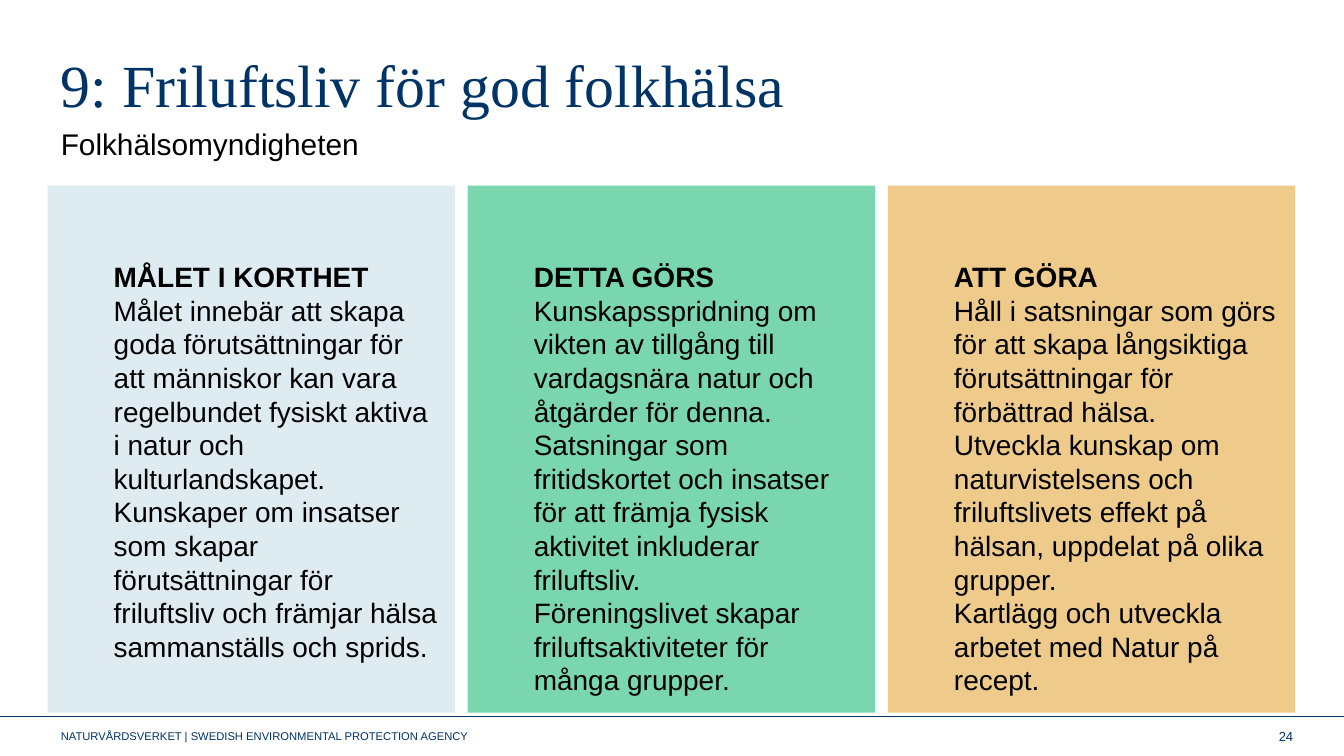
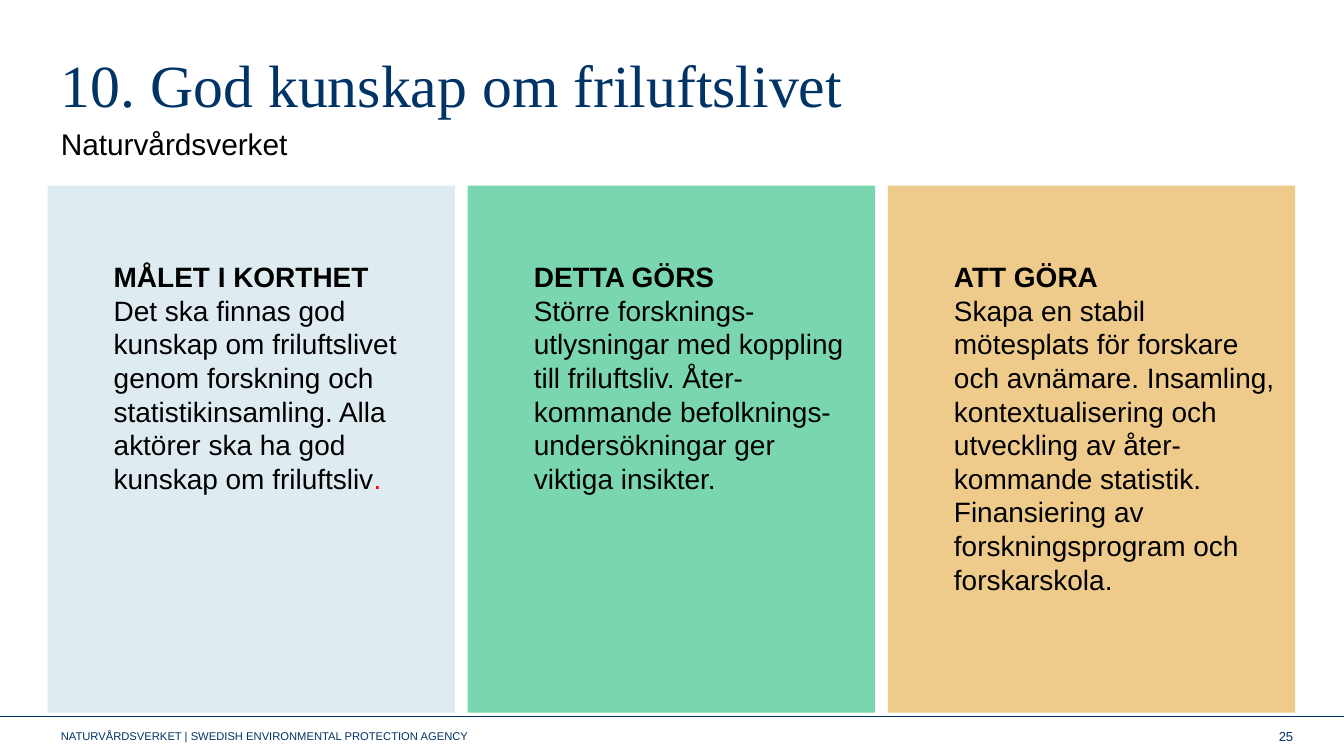
import lxml.etree
import pptx
import pptx.dml.color
import pptx.enum.shapes
import pptx.enum.text
import pptx.oxml.ns
import pptx.util

Cm = pptx.util.Cm
Pt = pptx.util.Pt
Anchor = pptx.enum.text.MSO_ANCHOR
Align = pptx.enum.text.PP_ALIGN

COLORS = {
    "navy": "003366",
    "black": "000000",
    "red": "FF0000",
    "ice": "DEECF1",
    "mint": "7AD6AE",
    "sand": "EECB8B",
}
BODY_FONT = "Arial"
TITLE_FONT = "Times New Roman"

SLIDE_WIDTH, SLIDE_HEIGHT = 25.4, 14.29
LEFT = 0.9
FOOTER_TOP, FOOTER_HEIGHT = 13.54, 0.76
COLUMN_TOP, COLUMN_WIDTH, COLUMN_HEIGHT, COLUMN_GAP = 3.51, 7.7, 9.96, 0.24

FOOTER = "NATURVÅRDSVERKET | SWEDISH ENVIRONMENTAL PROTECTION AGENCY"
COLUMNS = [("MÅLET I KORTHET", "ice"), ("DETTA GÖRS", "mint"), ("ATT GÖRA", "sand")]

# Each column is a list of paragraphs; a paragraph is a list of (text, colour) runs or a string.
GOALS = [
    {
        "page": "24",
        "title": "9: Friluftsliv för god folkhälsa",
        "agency": "Folkhälsomyndigheten",
        "columns": [
            ["Målet innebär att skapa goda förutsättningar för att människor kan vara "
             "regelbundet fysiskt aktiva i natur och kulturlandskapet. Kunskaper om "
             "insatser som skapar förutsättningar för friluftsliv och främjar hälsa "
             "sammanställs och sprids."],
            ["Kunskapsspridning om vikten av tillgång till vardagsnära natur och "
             "åtgärder för denna.",
             "Satsningar som fritidskortet och insatser för att främja fysisk aktivitet "
             "inkluderar friluftsliv.",
             "Föreningslivet skapar friluftsaktiviteter för många grupper."],
            ["Håll i satsningar som görs för att skapa långsiktiga förutsättningar för "
             "förbättrad hälsa.",
             "Utveckla kunskap om naturvistelsens och friluftslivets effekt på hälsan, "
             "uppdelat på olika grupper.",
             "Kartlägg och utveckla arbetet med Natur på recept."],
        ],
    },
    {
        "page": "25",
        "title": "10. God kunskap om friluftslivet",
        "agency": "Naturvårdsverket",
        "columns": [
            [[("Det ska finnas god kunskap om friluftslivet genom forskning och "
               "statistikinsamling. Alla aktörer ska ha god kunskap om friluftsliv", "black"),
              (".", "red")]],
            ["Större forsknings-utlysningar med koppling till friluftsliv. Åter-kommande "
             "befolknings-undersökningar ger viktiga insikter."],
            ["Skapa en stabil mötesplats för forskare och avnämare. Insamling, "
             "kontextualisering och utveckling av åter-kommande statistik. Finansiering "
             "av forskningsprogram och forskarskola."],
        ],
    },
]


def rgb(color):
    return pptx.dml.color.RGBColor.from_string(COLORS[color])


class Deck:
    def __init__(self):
        self.presentation = pptx.Presentation()
        self.presentation.slide_width = Cm(SLIDE_WIDTH)
        self.presentation.slide_height = Cm(SLIDE_HEIGHT)
        self.slide = None

    def new_slide(self, page):
        """Start a blank slide with the footer rule, footer and page number."""
        self.slide = self.presentation.slides.add_slide(self.presentation.slide_layouts[6])
        self.rule(FOOTER_TOP)
        self.text(FOOTER, LEFT, FOOTER_TOP, 8.6, FOOTER_HEIGHT, 6, "navy", anchor=Anchor.MIDDLE)
        self.text(page, 18.98, FOOTER_TOP, 5.71, FOOTER_HEIGHT, 7, "navy",
                  anchor=Anchor.MIDDLE, align=Align.RIGHT)

    def rule(self, top):
        line = self.slide.shapes.add_connector(
            pptx.enum.shapes.MSO_CONNECTOR.STRAIGHT, 0, Cm(top), Cm(SLIDE_WIDTH), Cm(top))
        line.line.color.rgb = rgb("navy")
        line.line.width = Pt(0.4)
        properties = line._element.spPr
        lxml.etree.SubElement(properties, pptx.oxml.ns.qn("a:effectLst"))

    def style(self, paragraph, size, color, font=BODY_FONT, bold=False):
        paragraph.font.name = font
        paragraph.font.size = Pt(size)
        paragraph.font.bold = bold
        paragraph.font.color.rgb = rgb(color)

    def text(self, text, left, top, width, height, size, color, font=BODY_FONT,
             anchor=Anchor.TOP, align=Align.LEFT):
        box = self.slide.shapes.add_textbox(Cm(left), Cm(top), Cm(width), Cm(height))
        frame = box.text_frame
        frame.word_wrap = True
        frame.vertical_anchor = anchor
        paragraph = frame.paragraphs[0]
        paragraph.text = text
        paragraph.alignment = align
        self.style(paragraph, size, color, font)
        return box

    def heading(self, title, agency):
        box = self.text(title, LEFT, 0.74, 16, 1.8, 32, "navy", TITLE_FONT)
        box.text_frame.paragraphs[0].line_spacing = Pt(39.6)
        box = self.text(agency, LEFT, 2.26, 10.4, 0.94, 16, "black")
        box.text_frame.auto_size = pptx.enum.text.MSO_AUTO_SIZE.SHAPE_TO_FIT_TEXT

    def column(self, group, index, heading, fill, paragraphs):
        left = LEFT + index * (COLUMN_WIDTH + COLUMN_GAP)
        shape = group.shapes.add_shape(
            pptx.enum.shapes.MSO_SHAPE.RECTANGLE,
            Cm(left), Cm(COLUMN_TOP), Cm(COLUMN_WIDTH), Cm(COLUMN_HEIGHT))
        shape.shadow.inherit = False
        shape.fill.solid()
        shape.fill.fore_color.rgb = rgb(fill)
        shape.line.fill.background()
        frame = shape.text_frame
        frame.word_wrap = True
        frame.vertical_anchor = Anchor.TOP
        frame.margin_left = Cm(1.25)
        frame.margin_top = Cm(1.4)
        for position, content in enumerate([heading, *paragraphs]):
            paragraph = frame.add_paragraph() if position else frame.paragraphs[0]
            paragraph.alignment = Align.LEFT
            self.style(paragraph, 15, "black", bold=position == 0)
            if isinstance(content, str):
                paragraph.add_run().text = content
                continue
            for text, color in content:
                run = paragraph.add_run()
                run.text = text
                run.font.color.rgb = rgb(color)

    def columns(self, contents):
        group = self.slide.shapes.add_group_shape()
        for index, ((heading, fill), paragraphs) in enumerate(zip(COLUMNS, contents)):
            self.column(group, index, heading, fill, paragraphs)


def main():
    deck = Deck()
    for goal in GOALS:
        deck.new_slide(goal["page"])
        deck.heading(goal["title"], goal["agency"])
        deck.columns(goal["columns"])
    deck.presentation.save("out.pptx")


if __name__ == "__main__":
    main()
